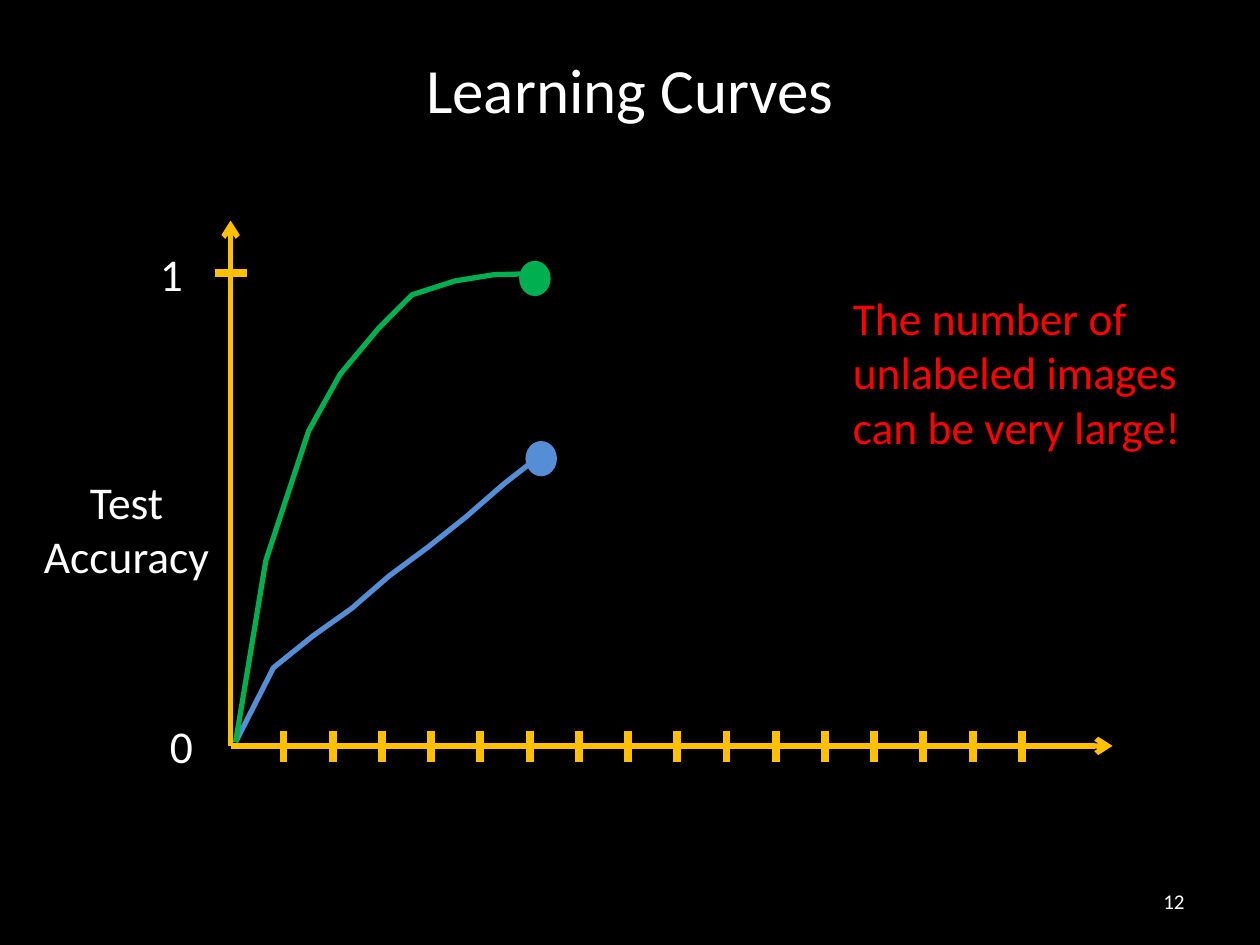
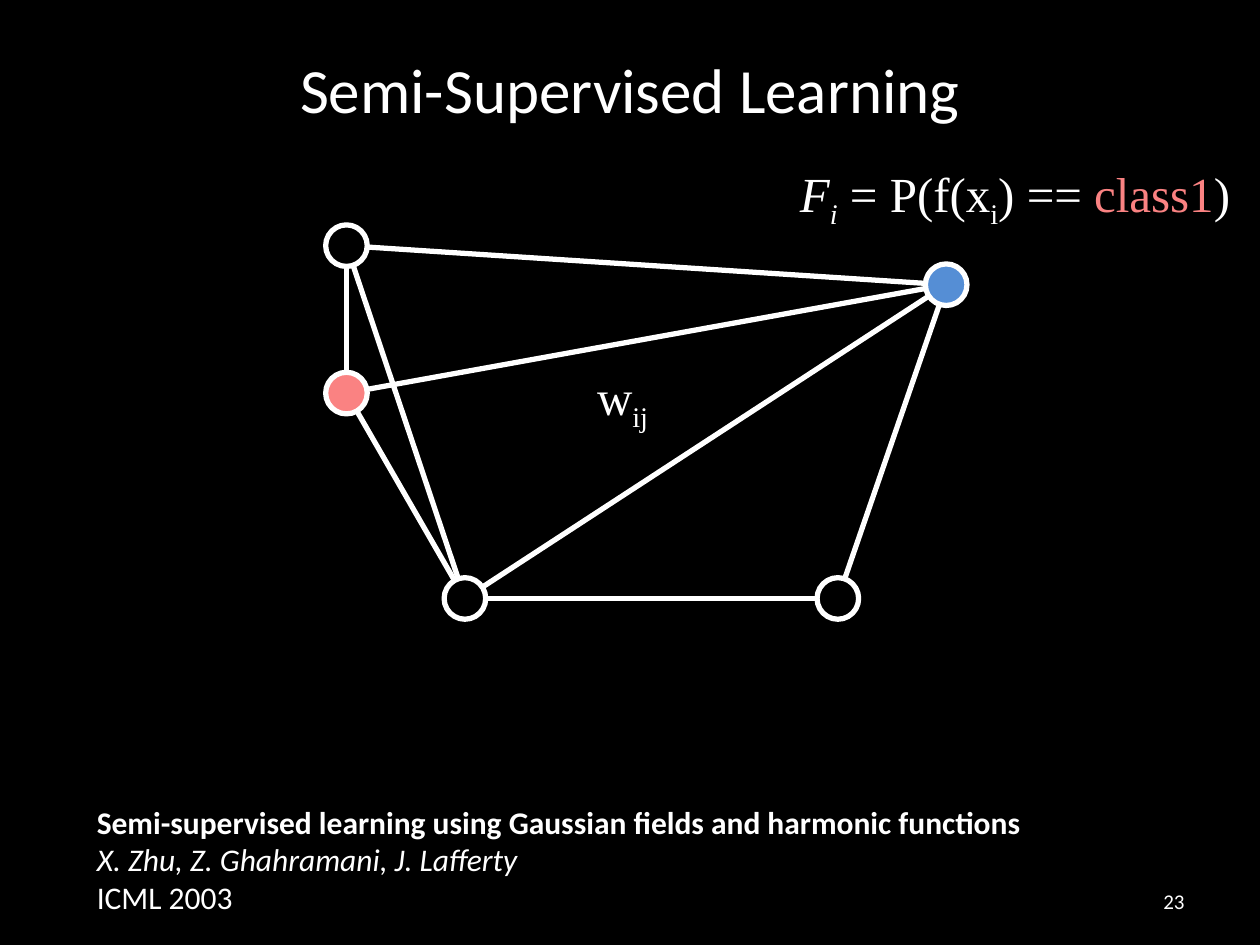
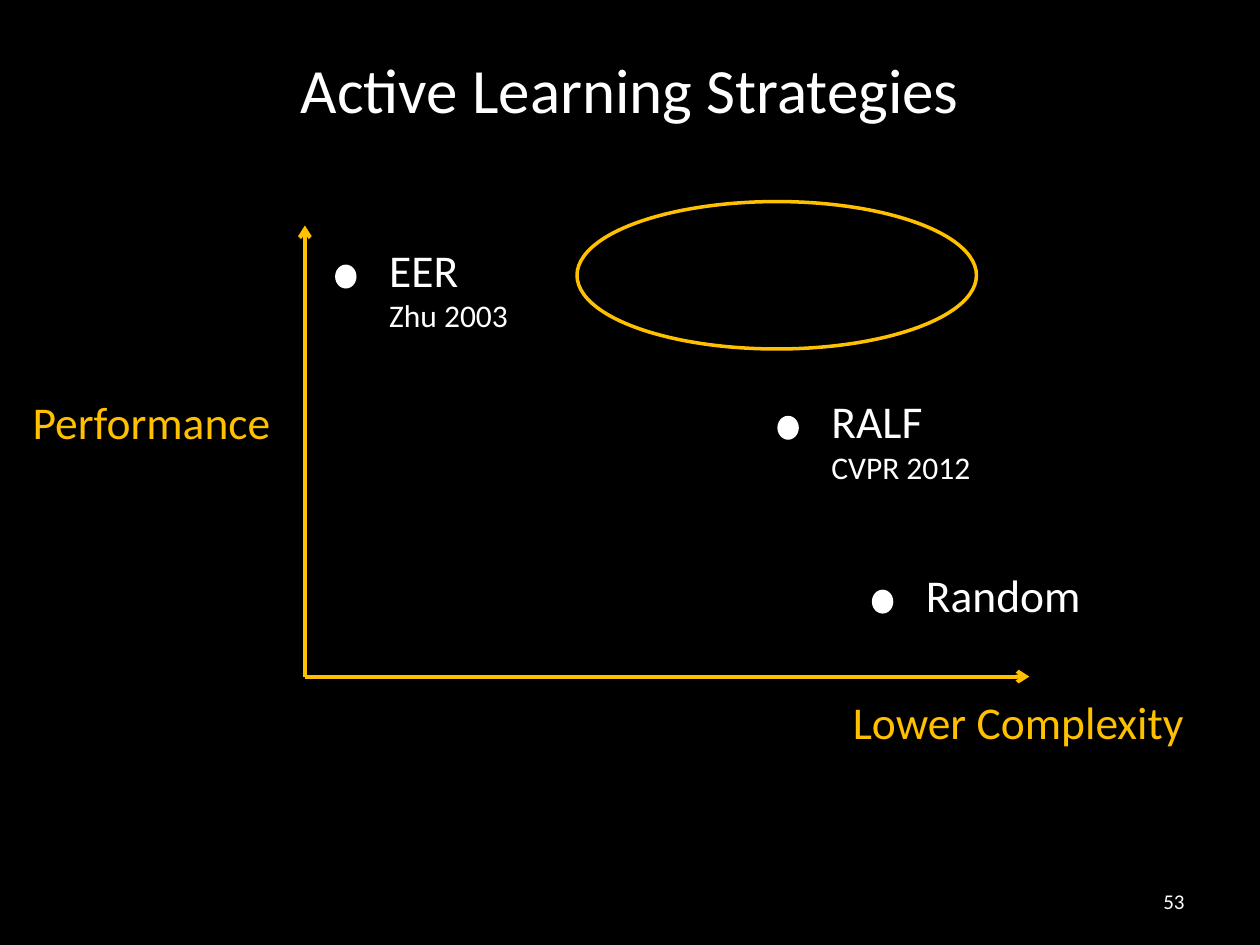
from lxml import etree
from pptx import Presentation
from pptx import util as u
from pptx.dml.color import RGBColor
from pptx.enum import shapes, text
from pptx.oxml.ns import qn

COLORS = {
    "black": "000000", "white": "FFFFFF", "gold": "FFC000", "red": "FF0000",
    "blue": "558ED5", "green": "00B050", "pink": "FA8282",
}
SERIF = "Times New Roman"
LEFT, CENTER, RIGHT = text.PP_ALIGN.LEFT, text.PP_ALIGN.CENTER, text.PP_ALIGN.RIGHT

# Learning curves: points in inches, then the end marker's place
CURVES = [
    ("blue", [(1.87, 5.89), (2.17, 5.3), (2.48, 5.05), (2.79, 4.83), (3.09, 4.57),
              (3.4, 4.34), (3.69, 4.11), (4, 3.84), (4.32, 3.59)], (4.17, 3.5)),
    ("green", [(1.87, 5.89), (2.11, 4.45), (2.45, 3.42), (2.7, 2.97), (3.01, 2.6),
               (3.27, 2.34), (3.61, 2.23), (3.92, 2.18), (4.33, 2.17)], (4.12, 2.07)),
]
TICK_COUNT, FIRST_TICK, LAST_TICK, TICK_LENGTH = 16, 2.25, 8.11, 0.25

# Graph: node centres with fill, and the pairs that are joined
NODES = {
    "top": (2.75, 1.95, "black"),
    "labeled pink": (2.75, 3.12, "pink"),
    "bottom left": (3.69, 4.75, "black"),
    "bottom right": (6.65, 4.75, "black"),
    "labeled blue": (7.51, 2.26, "blue"),
}
EDGES = [
    ("labeled pink", "labeled blue"), ("labeled pink", "bottom left"),
    ("labeled pink", "top"), ("bottom left", "bottom right"),
    ("top", "labeled blue"), ("labeled blue", "bottom right"),
    ("bottom left", "labeled blue"), ("top", "bottom left"),
]
NODE_SIZE = 0.33
SUB = {"baseline": -25000}
FORMULA = [
    ("F", {"italic": True}), ("i", {"italic": True, **SUB}), (" = P(f(x", {}),
    ("i", SUB), (") == ", {}), ("class1", {"color": "pink"}), (")", {}),
]
WEIGHT = [("w", {}), ("ij", SUB)]
CITATION = [
    [("Semi-supervised learning using Gaussian ﬁelds and harmonic functions", {"bold": True})],
    [("X. Zhu, Z. Ghahramani, J. Lafferty", {"italic": True})],
    "ICML 2003",
]

# Strategies: dot's left and top, name, source
STRATEGIES = [
    (6.17, 3.3, "RALF", "CVPR 2012"),
    (2.66, 2.1, "EER", "Zhu 2003"),
    (6.92, 4.68, "Random", None),
]


def rgb(color):
    return RGBColor.from_string(COLORS[color])


def write(frame, paragraphs, size=26, color="white", font="Calibri", align=LEFT,
          anchor=text.MSO_ANCHOR.TOP):
    """Fill a frame; a paragraph is a string or a list of (text, format) runs."""
    frame.word_wrap = True
    frame.vertical_anchor = anchor
    for index, runs in enumerate(paragraphs):
        para = frame.add_paragraph() if index else frame.paragraphs[0]
        para.alignment = align
        for words, style in [(runs, {})] if isinstance(runs, str) else runs:
            span = para.add_run()
            span.text = words
            span.font.name = font
            span.font.size = u.Pt(style.get("size", size))
            span.font.bold = style.get("bold", False)
            span.font.italic = style.get("italic", False)
            span.font.color.rgb = rgb(style.get("color", color))
            if "baseline" in style:
                span.font._element.set("baseline", str(style["baseline"]))


def add_text(page, left, top, width, height, paragraphs, **style):
    box = page.shapes.add_textbox(*map(u.Inches, (left, top, width, height)))
    write(box.text_frame, paragraphs, **style)


def add_line(page, start, end, color, width, arrow=False):
    line = page.shapes.add_connector(
        shapes.MSO_CONNECTOR.STRAIGHT, *map(u.Inches, (*start, *end)))
    line.line.color.rgb = rgb(color)
    line.line.width = u.Pt(width)
    if arrow:
        etree.SubElement(line.line._get_or_add_ln(), qn("a:tailEnd"), type="arrow")
    etree.SubElement(line._element.spPr, qn("a:effectLst"))


def add_ellipse(page, left, top, width, height, fill=None, outline=None, weight=3):
    oval = page.shapes.add_shape(
        shapes.MSO_SHAPE.OVAL, *map(u.Inches, (left, top, width, height)))
    oval.shadow.inherit = False
    if fill:
        oval.fill.solid()
        oval.fill.fore_color.rgb = rgb(fill)
    else:
        oval.fill.background()
    if outline:
        oval.line.color.rgb = rgb(outline)
        oval.line.width = u.Pt(weight)
    else:
        oval.line.fill.background()


def add_curve(page, points, color):
    start, *rest = [(u.Inches(x), u.Inches(y)) for x, y in points]
    builder = page.shapes.build_freeform(*start)
    builder.add_line_segments(rest, close=False)
    curve = builder.convert_to_shape()
    curve.shadow.inherit = False
    curve.fill.background()
    curve.line.color.rgb = rgb(color)
    curve.line.width = u.Pt(3)


def add_axes(page, origin, right, top, width):
    add_line(page, origin, (right, origin[1]), "gold", width, arrow=True)
    add_line(page, origin, (origin[0], top), "gold", width, arrow=True)


def add_page(deck, title, number):
    page = deck.slides.add_slide(deck.slide_layouts[5])
    heading = page.shapes.title
    heading.left, heading.top, heading.width, heading.height = map(
        u.Inches, (0.5, 0.08, 9, 1.25))
    middle = text.MSO_ANCHOR.MIDDLE
    write(heading.text_frame, [title], size=36, align=CENTER, anchor=middle)
    add_text(page, 7.17, 6.95, 2.33, 0.4, [str(number)], size=12, align=RIGHT, anchor=middle)
    return page


def build_curves(deck):
    page = add_page(deck, "Learning Curves", 12)
    add_axes(page, (1.83, 5.92), 8.83, 1.75, 3)
    # Ticks
    step = (LAST_TICK - FIRST_TICK) / (TICK_COUNT - 1)
    for index in range(TICK_COUNT):
        x = FIRST_TICK + index * step
        add_line(page, (x, 5.8), (x, 5.8 + TICK_LENGTH), "gold", 4.5)
    add_line(page, (1.71, 2.17), (1.71 + TICK_LENGTH, 2.17), "gold", 4.5)
    # Labels
    add_text(page, 1.17, 1.9, 0.67, 0.54, ["1"])
    add_text(page, 1.25, 5.65, 0.67, 0.54, ["0"])
    add_text(page, 0.17, 3.71, 1.67, 0.98, ["Test", "Accuracy"], align=CENTER)
    add_text(page, 6.67, 2.25, 2.92, 1.41,
             ["The number of unlabeled images can be very large!"], color="red")
    # Curves with end markers
    for color, points, marker in CURVES:
        add_curve(page, points, color)
        add_ellipse(page, *marker, 0.25, 0.28, fill=color)


def build_graph(deck):
    page = add_page(deck, "Semi-Supervised Learning", 23)
    for start, end in EDGES:
        add_line(page, NODES[start][:2], NODES[end][:2], "white", 3)
    for x, y, fill in NODES.values():
        add_ellipse(page, x - NODE_SIZE / 2, y - NODE_SIZE / 2, NODE_SIZE, NODE_SIZE,
                    fill=fill, outline="white")
    add_text(page, 6.25, 1.25, 3.75, 0.57, [FORMULA], size=28, font=SERIF)
    add_text(page, 4.64, 2.86, 2.44, 0.57, [WEIGHT], size=28, font=SERIF)
    add_text(page, 0.67, 6.32, 8.83, 1.01, CITATION, size=18)


def build_strategies(deck):
    page = add_page(deck, "Active Learning Strategies", 53)
    add_axes(page, (2.42, 5.37), 8.17, 1.79, 2.25)
    add_text(page, 6.67, 5.46, 3.08, 0.54, ["Lower Complexity"], color="gold")
    add_text(page, 0.16, 3.08, 2.25, 0.54, ["Performance"], color="gold")
    # Each label sits right of its dot
    for left, top, name, source in STRATEGIES:
        add_ellipse(page, left, top, 0.17, 0.19, fill="white")
        lines = [name] + ([[(source, {"size": 18})]] if source else [])
        add_text(page, left + 0.33, top - 0.23, 2.25, 0.84 if source else 0.54, lines)
    # Target region
    add_ellipse(page, 4.58, 1.6, 3.17, 1.17, outline="gold", weight=2)


def main():
    deck = Presentation()
    deck.slide_width, deck.slide_height = u.Inches(10), u.Inches(7.5)
    backdrop = deck.slide_master.background.fill
    backdrop.solid()
    backdrop.fore_color.rgb = rgb("black")
    build_curves(deck)
    build_graph(deck)
    build_strategies(deck)
    deck.save("out.pptx")


if __name__ == "__main__":
    main()
